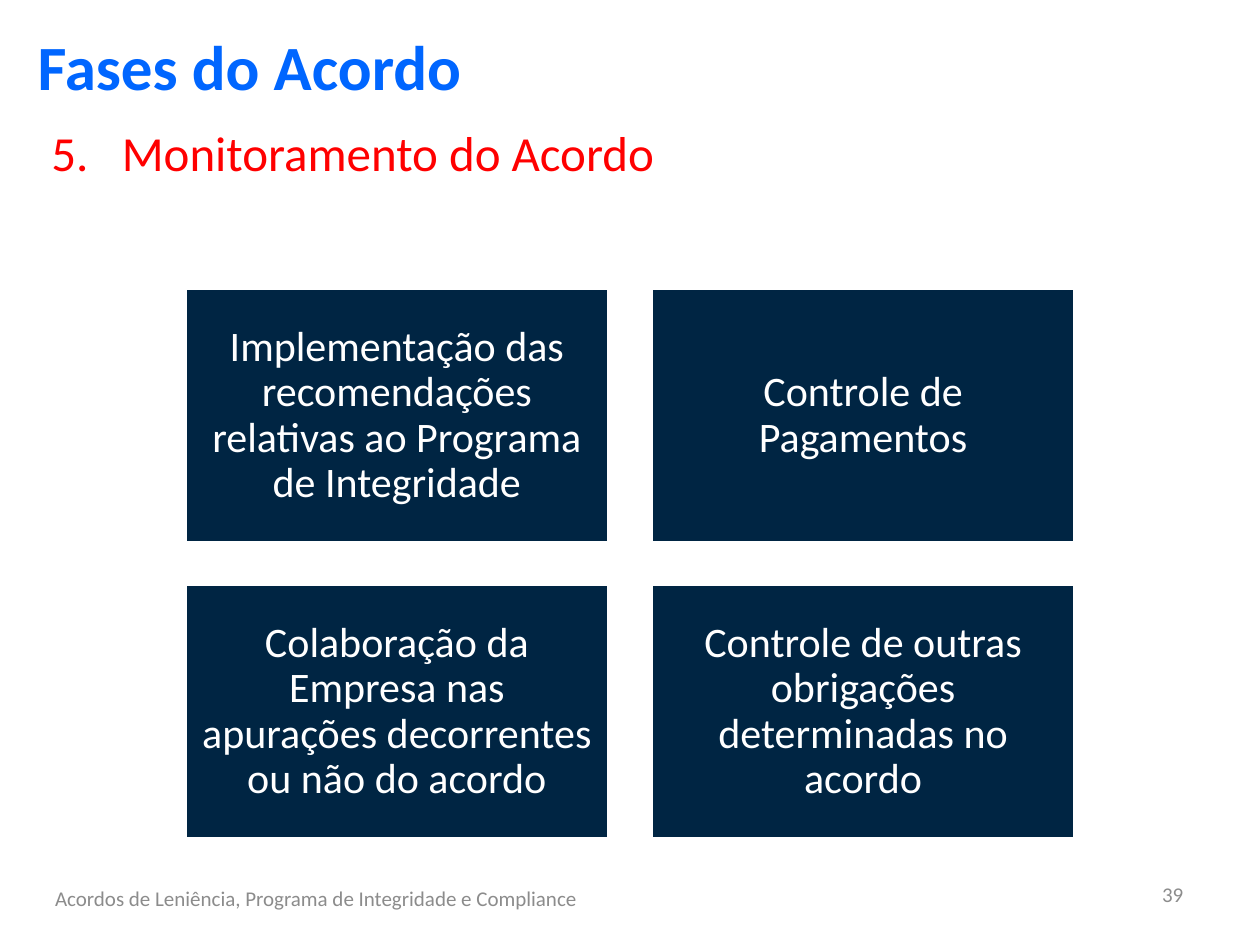
import pptx
import pptx.util
import pptx.dml.color
import pptx.enum.shapes
import pptx.enum.text
import lxml.etree

WIDTH, HEIGHT = 10, 7.5
COLORS = {
    "title": "0066FF",
    "phase": "FF0000",
    "card": "002543",
    "white": "FFFFFF",
    "footer": "8C8C8C",
}
ALIGN = pptx.enum.text.PP_ALIGN
ANCHOR = pptx.enum.text.MSO_ANCHOR

CARD_WIDTH, CARD_HEIGHT = 3.36, 2.02
GRID_LEFT, GRID_TOP = 1.47, 2.29
COLUMN_STEP, ROW_STEP = 3.7, 2.35
COLUMNS = 2
MONITORING_CARDS = [
    "Implementação das recomendações relativas ao Programa de Integridade",
    "Controle de Pagamentos",
    "Colaboração da Empresa nas apurações decorrentes ou não do acordo",
    "Controle de outras obrigações determinadas no acordo",
]


def rgb(name):
    return pptx.dml.color.RGBColor.from_string(COLORS[name])


def inches(*lengths):
    return [pptx.util.Inches(length) for length in lengths]


def write_text(holder, text, size, color, bold=False, align=ALIGN.LEFT,
               anchor=ANCHOR.TOP, margins=(0.1, 0.05), spacing=None):
    """Fill a shape or text box with one formatted paragraph."""
    frame = holder.text_frame
    frame.word_wrap = True
    frame.vertical_anchor = anchor
    frame.margin_left = frame.margin_right = pptx.util.Inches(margins[0])
    frame.margin_top = frame.margin_bottom = pptx.util.Inches(margins[1])
    paragraph = frame.paragraphs[0]
    paragraph.alignment = align
    if spacing:
        paragraph.line_spacing = spacing
    run = paragraph.add_run()
    run.text = text
    run.font.name = "Calibri"
    run.font.size = pptx.util.Pt(size)
    run.font.bold = bold
    run.font.color.rgb = rgb(color)
    return paragraph


def add_label(slide, box, text, **text_format):
    label = slide.shapes.add_textbox(*inches(*box))
    return write_text(label, text, **text_format)


def number_paragraph(paragraph, start, indent):
    """Give a paragraph an automatic number with a hanging indent."""
    properties = paragraph._p.get_or_add_pPr()
    properties.set("marL", str(pptx.util.Inches(indent)))
    properties.set("indent", str(-pptx.util.Inches(indent)))
    numbering = lxml.etree.SubElement(
        properties, pptx.oxml.ns.qn("a:buAutoNum"))
    numbering.set("type", "arabicPeriod")
    numbering.set("startAt", str(start))


def add_card(slide, index, text):
    row, column = divmod(index, COLUMNS)
    card = slide.shapes.add_shape(
        pptx.enum.shapes.MSO_SHAPE.RECTANGLE,
        *inches(GRID_LEFT + column * COLUMN_STEP, GRID_TOP + row * ROW_STEP,
                CARD_WIDTH, CARD_HEIGHT))
    card.shadow.inherit = False
    card.fill.solid()
    card.fill.fore_color.rgb = rgb("card")
    card.line.color.rgb = rgb("white")
    card.line.width = pptx.util.Pt(2)
    write_text(card, text, size=24, color="white", align=ALIGN.CENTER,
               anchor=ANCHOR.MIDDLE, margins=(0.1, 0.1), spacing=0.9)


def main():
    deck = pptx.Presentation()
    deck.slide_width, deck.slide_height = inches(WIDTH, HEIGHT)
    slide = deck.slides.add_slide(deck.slide_layouts[6])

    # Four monitoring tasks in a grid
    for index, text in enumerate(MONITORING_CARDS):
        add_card(slide, index, text)

    # Title and numbered phase
    add_label(slide, (0.2, 0.17, 4.62, 0.55), "Fases do Acordo",
              size=36, color="title", bold=True)
    phase = add_label(slide, (0.31, 0.92, 9.46, 0.45),
                      "Monitoramento do Acordo", size=28, color="phase")
    phase.space_before = pptx.util.Pt(5.6)
    number_paragraph(phase, start=5, indent=0.56)

    # Page number and footer
    add_label(slide, (7.6, 6.9, 1.89, 0.4), "39", size=12, color="footer",
              align=ALIGN.RIGHT, anchor=ANCHOR.MIDDLE)
    add_label(slide, (0.26, 6.93, 4.5, 0.4),
              "Acordos de Leniência, Programa de Integridade e Compliance",
              size=12, color="footer", align=ALIGN.CENTER,
              anchor=ANCHOR.MIDDLE)

    deck.save("out.pptx")


if __name__ == "__main__":
    main()
